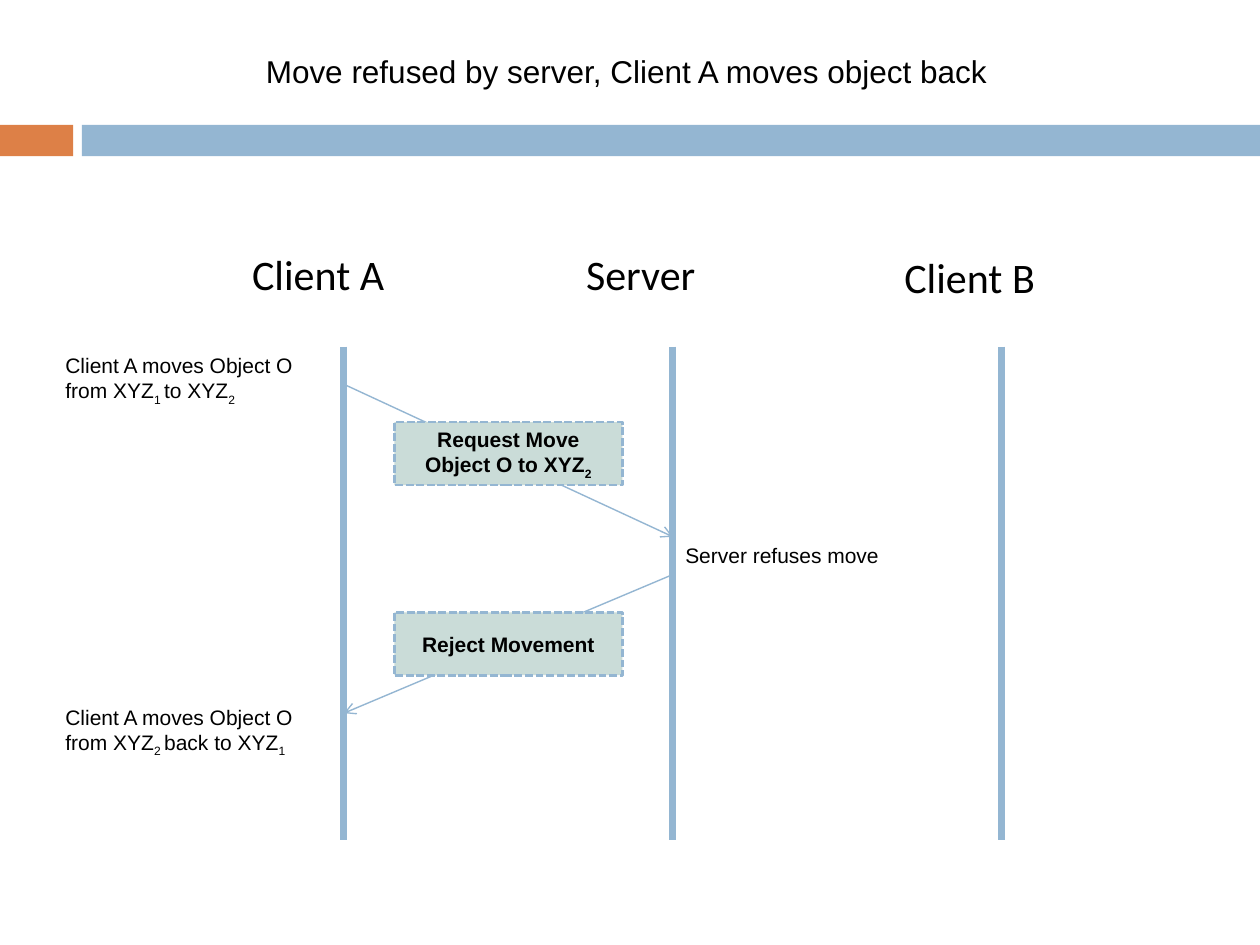
import pptx
import pptx.util
from lxml import etree
from pptx.dml.color import RGBColor
from pptx.enum.dml import MSO_LINE
from pptx.enum.shapes import MSO_CONNECTOR, MSO_SHAPE
from pptx.enum.text import MSO_ANCHOR, PP_ALIGN
from pptx.oxml.ns import qn
from pptx.util import Inches, Pt

COLORS = {"orange": "DD8047", "blue": "94B6D2", "message": "CADCD8", "text": "000000"}
COLORS = {name: RGBColor.from_string(value) for name, value in COLORS.items()}


def write(sp, parts, size=12, font="Arial", bold=False, align=PP_ALIGN.LEFT):
    """Fill one paragraph; every second part is a subscript."""
    tf = sp.text_frame
    tf.word_wrap = True
    p = tf.paragraphs[0]
    p.alignment = align
    for i, part in enumerate(parts):
        r = p.add_run()
        r.text = part
        r.font.size = Pt(size)
        r.font.name = font
        r.font.bold = bold
        r.font.color.rgb = COLORS["text"]
        if i % 2:
            r._r.get_or_add_rPr().set("baseline", "-25000")


def add_line(x1, y1, x2, y2, width, arrow=False):
    line = s.shapes.add_connector(
        MSO_CONNECTOR.STRAIGHT, Inches(x1), Inches(y1), Inches(x2), Inches(y2))
    line.line.color.rgb = COLORS["blue"]
    line.line.width = Pt(width)
    if arrow:
        etree.SubElement(line.line._get_or_add_ln(), qn("a:tailEnd"), type="arrow")
    etree.SubElement(line._element.spPr, qn("a:effectLst"))


prs = pptx.Presentation()
prs.slide_width, prs.slide_height = Inches(10), Inches(7.5)
s = prs.slides.add_slide(prs.slide_layouts[5])

# Title
title = s.shapes.title
title.left, title.top = Inches(2.01), Inches(0.36)
title.width, title.height = Inches(5.98), Inches(0.4)
write(title, ["Move refused by server, Client A moves object back"], size=18)
title.text_frame.word_wrap = False
title.text_frame.vertical_anchor = MSO_ANCHOR.TOP

# Header bars
for left, width, color in [(0, 0.58, "orange"), (0.65, 9.35, "blue")]:
    bar = s.shapes.add_shape(
        MSO_SHAPE.RECTANGLE, Inches(left), Inches(0.99), Inches(width), Inches(0.25))
    bar.shadow.inherit = False
    bar.fill.solid()
    bar.fill.fore_color.rgb = COLORS[color]
    bar.line.fill.background()

# Participants
for name, left, top, width in [("Client A", 1.42, 1.92, 2.21),
                               ("Server", 3.63, 1.92, 2.91),
                               ("Client B", 6.24, 1.95, 2.91)]:
    label = s.shapes.add_textbox(Inches(left), Inches(top), Inches(width), Inches(0.5))
    write(label, [name], size=24, font="Calibri", align=PP_ALIGN.CENTER)

# Message arrows and lifelines
client_a, server, client_b = [2.73 + 2.61 * i for i in range(3)]
add_line(client_a, 3.05, server, 4.26, 0.79, arrow=True)
for x in (client_a, server, client_b):
    add_line(x, 2.75, x, 6.67, 4)
add_line(server, 4.56, client_a, 5.66, 0.79, arrow=True)

# Message boxes
for top, parts in [(3.35, ["Request Move Object O to XYZ", "2"]),
                   (4.86, ["Reject Movement"])]:
    box = s.shapes.add_shape(
        MSO_SHAPE.RECTANGLE, Inches(3.13), Inches(top), Inches(1.81), Inches(0.5))
    box.shadow.inherit = False
    box.fill.solid()
    box.fill.fore_color.rgb = COLORS["message"]
    box.line.color.rgb = COLORS["blue"]
    box.line.width = Pt(1.5)
    box.line.dash_style = MSO_LINE.SQUARE_DOT
    box.text_frame.vertical_anchor = MSO_ANCHOR.MIDDLE
    write(box, parts, bold=True, align=PP_ALIGN.CENTER)

# Event notes
for left, top, height, parts in [
    (0.42, 2.75, 0.5, ["Client A moves Object O from XYZ", "1 ", "to XYZ", "2"]),
    (0.42, 5.54, 0.5, ["Client A moves Object O from XYZ", "2 ", "back to XYZ", "1"]),
    (server, 4.26, 0.3, ["Server refuses move"]),
]:
    note = s.shapes.add_textbox(Inches(left), Inches(top), Inches(2.31), Inches(height))
    write(note, parts)

prs.save("out.pptx")
